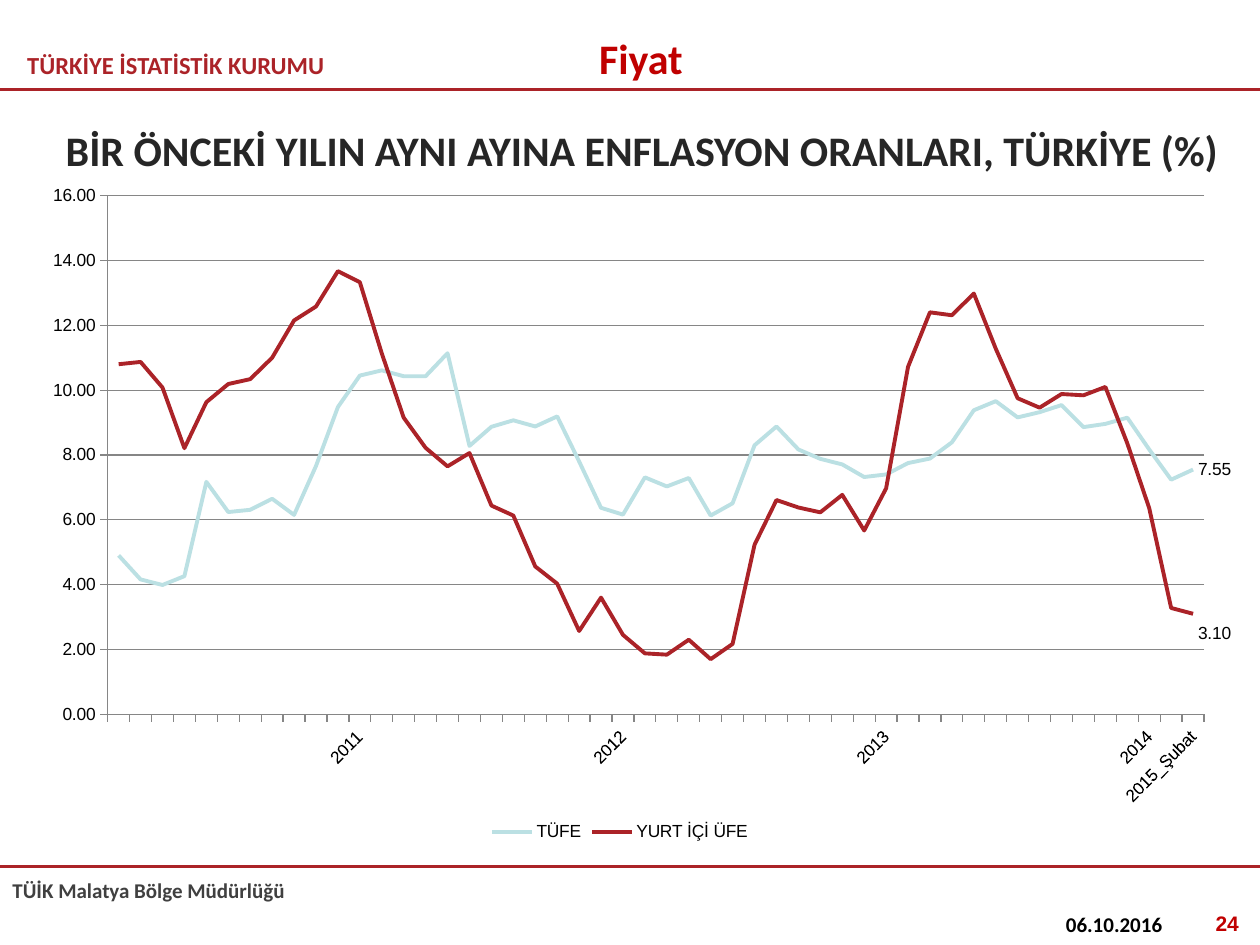
"""Build the slide comparing yearly consumer and producer inflation in Türkiye."""
import pptx
import pptx.chart.data
import pptx.dml.color
import pptx.enum.chart
import pptx.enum.shapes
import pptx.enum.text
import pptx.oxml
import pptx.oxml.ns
import pptx.util

Pt = pptx.util.Pt
ALIGN = pptx.enum.text.PP_ALIGN
ANCHOR = pptx.enum.text.MSO_ANCHOR
COLOURS = {
    "brand": "AB2328",
    "accent": "C00000",
    "title": "262626",
    "footer": "404040",
    "black": "000000",
    "consumer": "BBE0E3",
    "grid": "868686",
}


def rgb(name):
    return pptx.dml.color.RGBColor.from_string(COLOURS[name])


def manual_layout(x, y, extra=""):
    return pptx.oxml.parse_xml(
        f'<c:layout {pptx.oxml.ns.nsdecls("c")}><c:manualLayout>{extra}'
        f'<c:x val="{x}"/><c:y val="{y}"/></c:manualLayout></c:layout>'
    )


presentation = pptx.Presentation()
presentation.slide_width = Pt(720)
presentation.slide_height = Pt(540)
slide = presentation.slides.add_slide(presentation.slide_layouts[6])

for y in (51, 495):
    rule = slide.shapes.add_connector(
        pptx.enum.shapes.MSO_CONNECTOR.STRAIGHT, Pt(0), Pt(y), Pt(720), Pt(y)
    )
    rule.line.color.rgb = rgb("brand")
    rule.line.width = Pt(1.5)
    rule._element.spPr.append(
        pptx.oxml.parse_xml(f'<a:effectLst {pptx.oxml.ns.nsdecls("a")}/>')
    )

texts = [
    ("TÜRKİYE İSTATİSTİK KURUMU", (8.5, 23, 255, 28), 14, "Calibri", "brand", ALIGN.LEFT, ANCHOR.MIDDLE),
    ("TÜİK Malatya Bölge Müdürlüğü", (0, 498, 309, 22), 12, "Calibri", "footer", ALIGN.LEFT, ANCHOR.TOP),
    ("BİR ÖNCEKİ YILIN AYNI AYINA ENFLASYON ORANLARI, TÜRKİYE (%)", (14, 49, 706, 73), 24, "Calibri", "title", ALIGN.CENTER, ANCHOR.MIDDLE),
    ("06.10.2016", (602, 517.5, 90, 22), 12, "Calibri", "black", ALIGN.LEFT, ANCHOR.TOP),
    ("24", (547, 516.5, 168, 23), 12, "Arial", "accent", ALIGN.RIGHT, ANCHOR.TOP),
    ("Fiyat", (297.5, 15, 137.5, 36), 24, "Calibri", "accent", ALIGN.CENTER, ANCHOR.MIDDLE),
]
for text, box, size, font_name, colour, alignment, anchor in texts:
    shape = slide.shapes.add_textbox(*map(Pt, box))
    shape.text_frame.word_wrap = True
    shape.text_frame.vertical_anchor = anchor
    paragraph = shape.text_frame.paragraphs[0]
    paragraph.alignment = alignment
    run = paragraph.add_run()
    run.text = text
    run.font.name = font_name
    run.font.size = Pt(size)
    run.font.bold = True
    run.font.color.rgb = rgb(colour)

consumer_prices = [
    4.9, 4.16, 3.99, 4.26, 7.17, 6.24, 6.31, 6.65, 6.15, 7.66, 9.48, 10.45,
    10.61, 10.43, 10.43, 11.14, 8.28, 8.87, 9.07, 8.88, 9.19, 7.8, 6.37, 6.16,
    7.31, 7.03, 7.29, 6.13, 6.51, 8.3, 8.88, 8.17, 7.88, 7.71, 7.32, 7.4,
    7.75, 7.89, 8.39, 9.38, 9.66, 9.16, 9.32, 9.54, 8.86, 8.96, 9.15, 8.17,
    7.24, 7.55,
]
producer_prices = [
    10.8, 10.87, 10.08, 8.21, 9.63, 10.19, 10.34, 11, 12.15, 12.58, 13.67, 13.33,
    11.13, 9.15, 8.22, 7.65, 8.06, 6.44, 6.13, 4.56, 4.03, 2.57, 3.6, 2.45,
    1.88, 1.84, 2.3, 1.7, 2.17, 5.23, 6.61, 6.38, 6.23, 6.77, 5.67, 6.97,
    10.72, 12.4, 12.31, 12.98, 11.28, 9.75, 9.46, 9.88, 9.84, 10.1, 8.36, 6.36,
    3.28, 3.1,
]
months = [""] * len(consumer_prices)
for index, year in enumerate(range(2011, 2015)):
    months[12 * index + 11] = str(year)
months[-1] = "2015_Şubat"

chart_data = pptx.chart.data.CategoryChartData(number_format="0.00")
chart_data.categories = months
chart_data.add_series("TÜFE", consumer_prices)
chart_data.add_series("YURT İÇİ ÜFE", producer_prices)
chart = slide.shapes.add_chart(
    pptx.enum.chart.XL_CHART_TYPE.LINE, Pt(11.5), Pt(101.5), Pt(692), Pt(382.5), chart_data
).chart
chart.has_title = False
chart.font.name = "Arial"
chart.font.size = Pt(10)
chart.font.color.rgb = rgb("black")
chart.has_legend = True
chart.legend.position = pptx.enum.chart.XL_LEGEND_POSITION.BOTTOM
chart.legend.include_in_layout = False

plot_area = chart._chartSpace.chart.plotArea
for layout in plot_area.xpath("c:layout"):
    plot_area.remove(layout)
plot_layout = manual_layout(
    0.073, 0.027,
    '<c:layoutTarget val="inner"/><c:xMode val="edge"/><c:yMode val="edge"/>',
)
for tag, value in (("w", 0.914), ("h", 0.775)):
    plot_layout[0].append(
        pptx.oxml.parse_xml(f'<c:{tag} {pptx.oxml.ns.nsdecls("c")} val="{value}"/>')
    )
plot_area.insert(0, plot_layout)

value_axis = chart.value_axis
value_axis.minimum_scale = 0
value_axis.maximum_scale = 16
value_axis.major_unit = 2
value_axis.has_major_gridlines = True
value_axis.major_gridlines.format.line.color.rgb = rgb("grid")
value_axis.major_gridlines.format.line.width = Pt(0.75)
value_axis.tick_labels.number_format = "0.00"
value_axis.tick_labels.number_format_is_linked = False
for axis in (value_axis, chart.category_axis):
    axis.major_tick_mark = pptx.enum.chart.XL_TICK_MARK.OUTSIDE
    axis.format.line.color.rgb = rgb("grid")
    axis.format.line.width = Pt(0.75)
    axis.tick_labels.font.size = Pt(10)

category_axis = chart.category_axis
category_axis._element.txPr.bodyPr.set("rot", "-2700000")
no_multi_level = category_axis._element.xpath("c:noMultiLvlLbl")[0]
for tag in ("tickLblSkip", "tickMarkSkip"):
    no_multi_level.addprevious(
        pptx.oxml.parse_xml(f'<c:{tag} {pptx.oxml.ns.nsdecls("c")} val="1"/>')
    )

for series, colour in zip(chart.plots[0].series, ("consumer", "brand")):
    series.smooth = False
    series.marker.style = pptx.enum.chart.XL_MARKER_STYLE.NONE
    series.format.line.color.rgb = rgb(colour)
    series.format.line.width = Pt(2.25)
    label = series.points[len(months) - 1].data_label
    label.font.size = Pt(10)
    label.position = pptx.enum.chart.XL_LABEL_POSITION.RIGHT

producer_label = chart.plots[0].series[1]._element.xpath("c:dLbls/c:dLbl")[0]
producer_label.insert(1, manual_layout(0, 0.03))

presentation.save("out.pptx")
